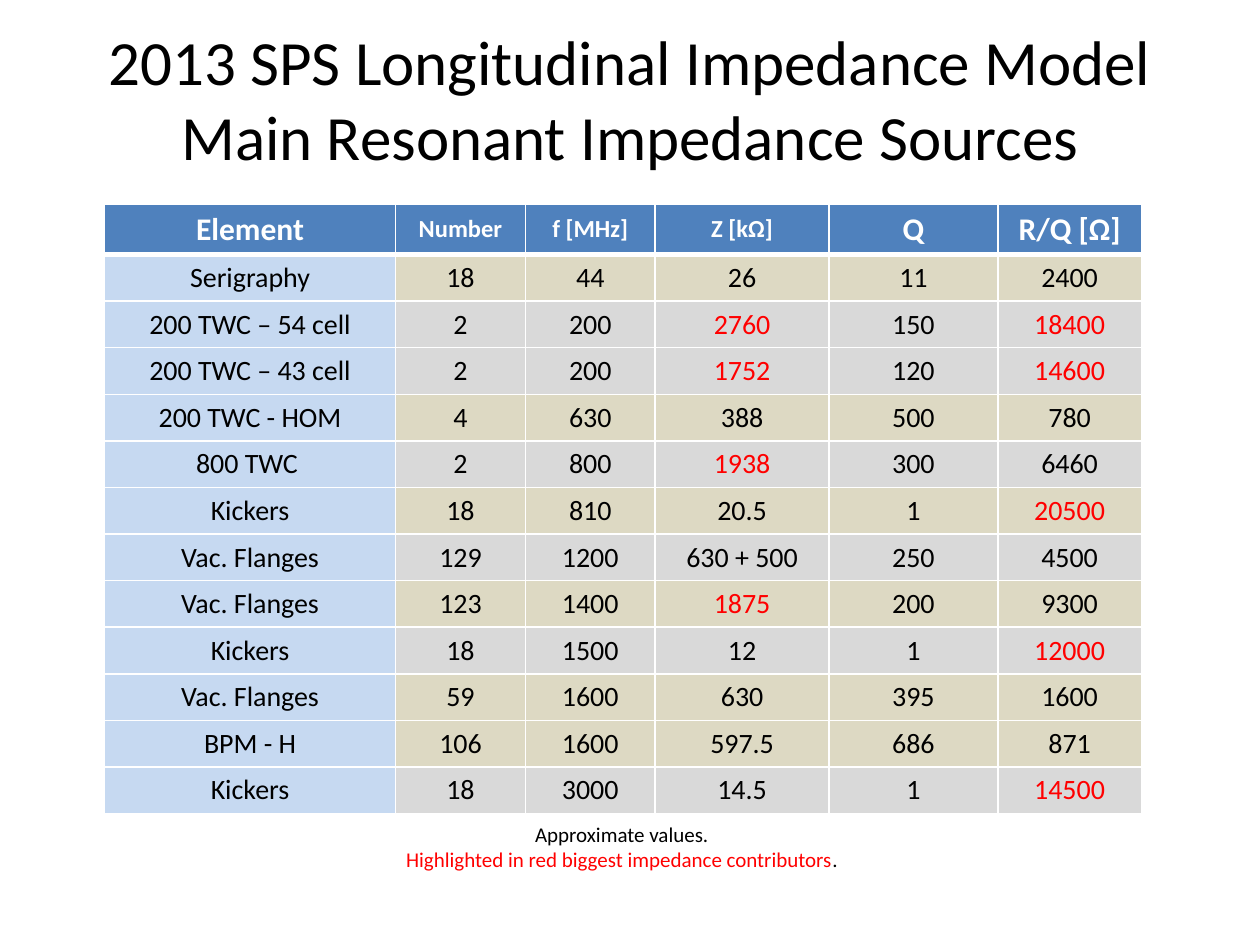
"""Build a slide with a table of the main resonant impedance sources."""
from lxml.etree import SubElement as Sub
from pptx import Presentation
from pptx.dml.color import RGBColor as RGB
from pptx.enum.text import MSO_ANCHOR as Anchor, PP_ALIGN as Align
from pptx.oxml.ns import qn
from pptx.util import Inches, Pt

BLACK = RGB(0, 0, 0)
WHITE = RGB(255, 255, 255)
RED = RGB(255, 0, 0)
BLUE = RGB(0x4F, 0x81, 0xBD)
PALE = RGB(0xC6, 0xD9, 0xF1)
SAND = RGB(0xDD, 0xD9, 0xC3)
GREY = RGB(0xD9, 0xD9, 0xD9)

HEAD = ["Element", "Number", "f [MHz]", "Z [kΩ]", "Q", "R/Q [Ω]"]
ROWS = [
    ["Serigraphy", "18", "44", "26", "11", "2400"],
    ["200 TWC – 54 cell", "2", "200", "2760", "150", "18400"],
    ["200 TWC – 43 cell", "2", "200", "1752", "120", "14600"],
    ["200 TWC - HOM", "4", "630", "388", "500", "780"],
    ["800 TWC ", "2", "800", "1938", "300", "6460"],
    ["Kickers", "18", "810", "20.5", "1", "20500"],
    ["Vac. Flanges", "129", "1200", "630 + 500", "250", "4500"],
    ["Vac. Flanges", "123", "1400", "1875", "200", "9300"],
    ["Kickers", "18", "1500", "12", "1", "12000"],
    ["Vac. Flanges", "59", "1600", "630", "395", "1600"],
    ["BPM - H", "106", "1600", "597.5", "686", "871"],
    ["Kickers", "18", "3000", "14.5", "1", "14500"],
]
COLS = [2.31, 1.03, 1.03, 1.38, 1.34, 1.14]
GREYS = {2, 3, 5, 7, 9, 12}
SMALL = {1, 2, 3}
LIMITS = {3: 1000, 5: 10000}


def write(para, text, size=16, color=BLACK, bold=False):
    para.alignment = Align.CENTER
    for i, line in enumerate(text.split("\n")):
        if i:
            para.add_line_break()
        run = para.add_run()
        run.text = line
        font = run.font
        font.name, font.size, font.bold = "Calibri", Pt(size), bold
        font.color.rgb = color


def edge(cell, side, width):
    line = Sub(cell._tc.get_or_add_tcPr(), qn(f"a:ln{side}"), w=str(Pt(width)))
    fill = Sub(line, qn("a:solidFill"))
    Sub(fill, qn("a:srgbClr"), val=str(WHITE))


deck = Presentation()
deck.slide_width, deck.slide_height = Inches(10), Inches(7.5)
slide = deck.slides.add_slide(deck.slide_layouts[6])
shapes = slide.shapes

title = shapes.add_textbox(0, 0, deck.slide_width, Inches(1.55)).text_frame
title.word_wrap = True
title.vertical_anchor = Anchor.MIDDLE
write(title.paragraphs[0],
      "2013 SPS Longitudinal Impedance Model\nMain Resonant Impedance Sources",
      size=36)

data = [HEAD] + ROWS
table = shapes.add_table(len(data), len(COLS), Inches(0.83), Inches(1.62),
                         Inches(sum(COLS)), Inches(4.84)).table
for col, width in zip(table.columns, COLS):
    col.width = Inches(width)

for r, words in enumerate(data):
    table.rows[r].height = Inches(0.37 if r else 0.4)
    for c, word in enumerate(words):
        cell = table.cell(r, c)
        cell.vertical_anchor = Anchor.MIDDLE
        for side in "LRTB":
            thick = (r, side) in ((0, "B"), (1, "T"))
            edge(cell, side, 3 if thick else 1)
        cell.fill.solid()
        para = cell.text_frame.paragraphs[0]
        if r == 0:
            cell.fill.fore_color.rgb = BLUE
            write(para, word, size=14 if c in SMALL else 18,
                  color=WHITE, bold=True)
        else:
            band = GREY if r in GREYS else SAND
            cell.fill.fore_color.rgb = band if c else PALE
            high = c in LIMITS and word.isdigit() and int(word) > LIMITS[c]
            write(para, word, color=RED if high else BLACK)

note = shapes.add_textbox(Inches(0.84), Inches(6.47),
                          Inches(8.19), Inches(0.5)).text_frame
note.word_wrap = True
write(note.paragraphs[0], "Approximate values.", size=12)
last = note.add_paragraph()
write(last, "Highlighted in red biggest impedance contributors",
      size=12, color=RED)
write(last, ".", size=12)

deck.save("out.pptx")
